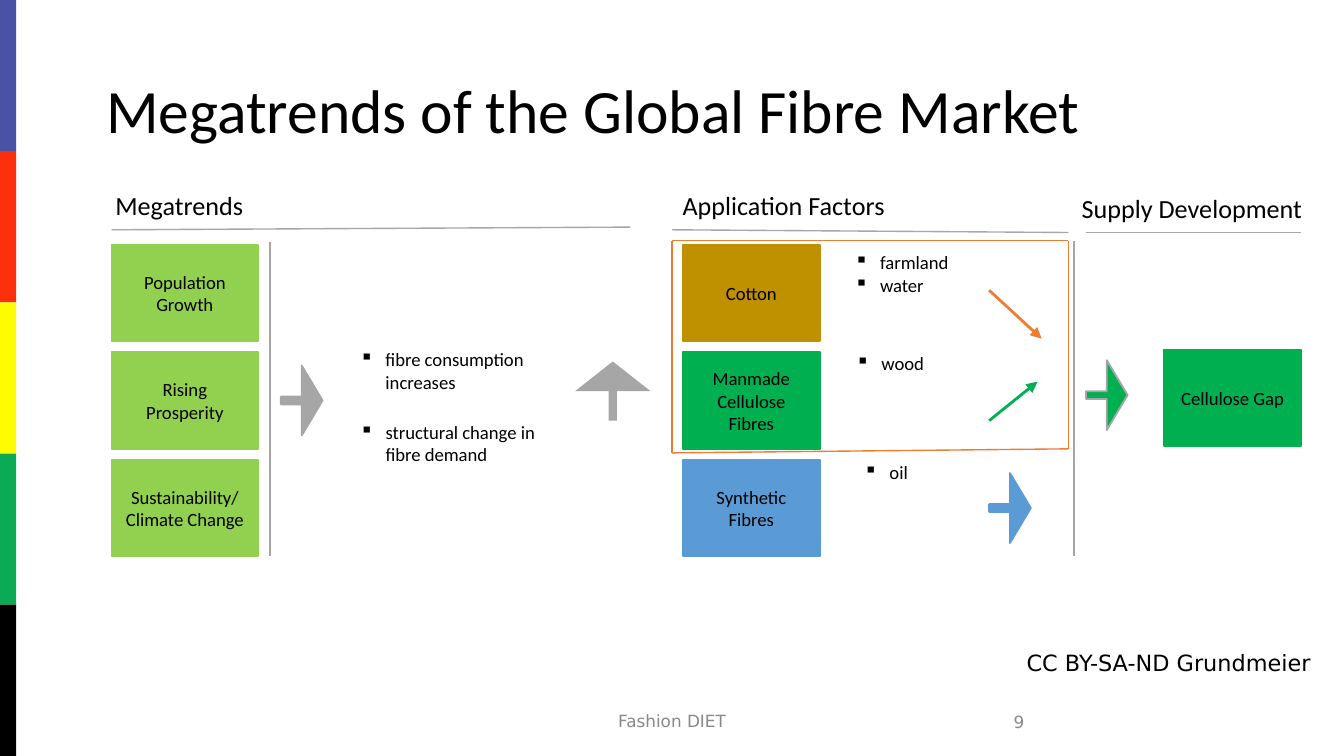
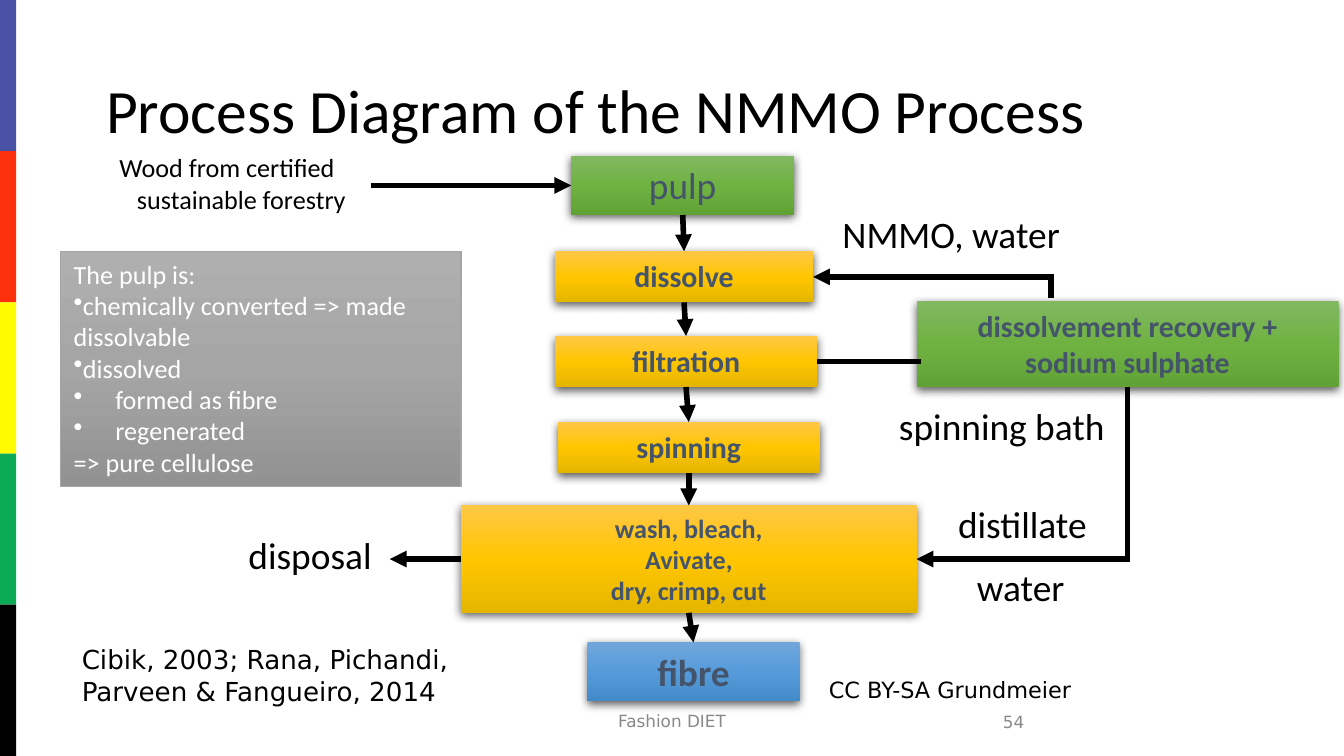
"""Build two slides on fibre market megatrends and the NMMO process."""
from copy import deepcopy
from itertools import pairwise

from lxml.etree import SubElement
from pptx import Presentation
from pptx.dml.color import RGBColor
from pptx.enum.shapes import MSO_CONNECTOR, MSO_SHAPE
from pptx.enum.text import MSO_ANCHOR, MSO_AUTO_SIZE, PP_ALIGN
from pptx.oxml.ns import qn
from pptx.util import Inches, Pt

BLACK = RGBColor(0x00, 0x00, 0x00)
WHITE = RGBColor(0xFF, 0xFF, 0xFF)
FOOTER_GREY = RGBColor(0x89, 0x89, 0x89)
RULE_GREY = RGBColor(0xA6, 0xA6, 0xA6)
DIVIDER_GREY = RGBColor(0xA5, 0xA5, 0xA5)
SLATE = RGBColor(0x44, 0x54, 0x6A)
LIME = RGBColor(0x92, 0xD0, 0x50)
OCHRE = RGBColor(0xBF, 0x90, 0x00)
GREEN = RGBColor(0x00, 0xB0, 0x50)
BLUE = RGBColor(0x5B, 0x9B, 0xD5)
ORANGE = RGBColor(0xED, 0x7D, 0x31)
BANDS = [RGBColor(0x49, 0x52, 0xA4), RGBColor(0xFC, 0x30, 0x0D),
         RGBColor(0xFF, 0xFB, 0x00), RGBColor(0x0B, 0xAA, 0x54), BLACK]
GREEN_FADE = [RGBColor(0x81, 0xB8, 0x61), RGBColor(0x6F, 0xB2, 0x42), RGBColor(0x61, 0xA2, 0x35)]
GOLD_FADE = [RGBColor(0xFF, 0xC7, 0x46), RGBColor(0xFF, 0xC6, 0x00), RGBColor(0xE5, 0xB6, 0x00)]
BLUE_FADE = [RGBColor(0x71, 0xA6, 0xDB), RGBColor(0x55, 0x9B, 0xDB), RGBColor(0x43, 0x8A, 0xC9)]
GREY_FADE = [RGBColor(0xAF, 0xAF, 0xAF), DIVIDER_GREY, RGBColor(0x92, 0x92, 0x92)]

BODY_FONT, FOOTER_FONT = "Calibri", "DejaVu Sans"
WIDTH, HEIGHT = 10, 10 * 9 / 16
BAND_WIDTH = 0.12
FOOTER = "Fashion DIET"

ROW_TOP, ROW_PITCH, ROW_HEIGHT = 1.82, 0.8, 0.72
TREND_COLUMN, FACTOR_COLUMN = (0.83, 1.09), (5.08, 1.02)
TRENDS = ["Population Growth", "Rising Prosperity", "Sustainability/ Climate Change"]
FACTORS = [("Cotton", OCHRE), ("Manmade Cellulose Fibres", GREEN), ("Synthetic Fibres", BLUE)]
HEADINGS = [("Megatrends", 0.76, 1.36, 1.33), ("Application Factors", 4.98, 1.36, 1.71),
            ("Supply Development", 7.95, 1.38, 1.9)]
BULLETS = [
    (["fibre consumption increases"], (2.58, 2.54, 1.47, 0.44)),
    (["structural change in fibre demand"], (2.58, 3.08, 1.55, 0.44)),
    (["farmland", "water"], (6.26, 1.82, 0.91, 0.44)),
    (["wood"], (6.27, 2.57, 0.71, 0.27)),
    (["oil"], (6.33, 3.38, 0.53, 0.27)),
]
BLOCK_ARROWS = [
    (MSO_SHAPE.RIGHT_ARROW, (2.09, 2.72, 0.31, 0.52), RULE_GREY, RULE_GREY),
    (MSO_SHAPE.UP_ARROW, (4.28, 2.69, 0.56, 0.44), RULE_GREY, None),
    (MSO_SHAPE.RIGHT_ARROW, (7.36, 3.52, 0.31, 0.52), BLUE, BLUE),
    (MSO_SHAPE.RIGHT_ARROW, (8.08, 2.68, 0.31, 0.52), GREEN, RULE_GREY),
]
RULES = [
    ((0.83, 1.71), (4.69, 1.69), RULE_GREY),
    ((5, 1.71), (7.95, 1.73), RULE_GREY),
    ((8.08, 1.73), (9.68, 1.73), RULE_GREY),
    ((2.01, 1.8), (2.01, 4.14), DIVIDER_GREY),
    ((7.99, 1.79), (7.99, 4.14), DIVIDER_GREY),
]
FRAME = [(5, 1.79), (7.95, 1.79), (7.95, 3.34), (5, 3.37)]
TENDENCIES = [((7.36, 2.16), (7.75, 2.52), ORANGE), ((7.36, 3.13), (7.72, 2.84), GREEN)]

STEPS = {
    "pulp": (["pulp"], (4.25, 1.16, 1.66, 0.44), GREEN_FADE, 20, False),
    "dissolve": (["dissolve"], (4.13, 1.87, 1.92, 0.38), GOLD_FADE, 16, True),
    "filtration": (["filtration"], (4.13, 2.5, 1.95, 0.38), GOLD_FADE, 16, True),
    "spinning": (["spinning"], (4.15, 3.14, 1.95, 0.38), GOLD_FADE, 16, True),
    "wash": (["wash, bleach,", "Avivate,", "dry, crimp, cut"],
             (3.43, 3.76, 3.39, 0.8), GOLD_FADE, 14, True),
    "fibre": (["fibre"], (4.37, 4.78, 1.58, 0.44), BLUE_FADE, 20, True),
    "recovery": (["dissolvement recovery + sodium sulphate"],
                 (6.82, 2.24, 3.14, 0.64), GREEN_FADE, 16, True),
}
MAIN_FLOW = ["pulp", "dissolve", "filtration", "spinning", "wash", "fibre"]
TOP, LEFT, BOTTOM, RIGHT = range(4)
SIDE_FLOWS = [
    (("wash", LEFT), (2.9, 4.16), True),
    ((2.76, 1.38), ("pulp", LEFT), True),
    (("recovery", BOTTOM), (8.39, 4.18), False),
    ((8.39, 4.16), ("wash", RIGHT), True),
    (("filtration", RIGHT), (6.85, 2.69), False),
    ((7.82, 2.22), (7.82, 2.04), False),
    ((7.82, 2.06), ("dissolve", RIGHT), True),
]
FLOW_LABELS = [
    ("NMMO, water", (6.17, 1.52, 2.1, 0.43)),
    ("spinning bath", (6.59, 2.95, 1.79, 0.44)),
    ("distillate", (7.03, 3.68, 1.28, 0.43)),
    ("water", (7.17, 4.15, 1.1, 0.43)),
    ("disposal", (1.75, 3.91, 1.15, 0.43)),
]
PULP_NOTE = [
    ("The pulp is:", None),
    ("chemically converted => made dissolvable", (0, -0.1, "•")),
    ("dissolved", (0, -0.1, "•")),
    ("formed as fibre", (0.31, -0.31, "•")),
    ("regenerated", (0.31, -0.31, "•")),
    ("=> pure cellulose", None),
]


def write(shape, lines, size, color=BLACK, font=BODY_FONT, bold=False,
          align=PP_ALIGN.LEFT, anchor=MSO_ANCHOR.TOP, indents=()):
    frame = shape.text_frame
    frame.text = "\n".join(lines)
    frame.word_wrap = True
    frame.auto_size = MSO_AUTO_SIZE.NONE
    frame.vertical_anchor = anchor
    for paragraph, indent in zip(frame.paragraphs, indents):
        if indent:
            margin, first, bullet = indent
            properties = paragraph._p.get_or_add_pPr()
            properties.set("marL", str(Inches(margin)))
            properties.set("indent", str(Inches(first)))
            if bullet:
                SubElement(properties, qn("a:buChar")).set("char", bullet)
    for paragraph in frame.paragraphs:
        paragraph.alignment = align
        for run in paragraph.runs:
            run.font.size = Pt(size)
            run.font.name = font
            run.font.bold = bold
            run.font.color.rgb = color


def add_text(slide, lines, place, size, **style):
    box = slide.shapes.add_textbox(*map(Inches, place))
    write(box, lines, size, **style)


def add_block(slide, place, fill=None, outline=None, weight=1, preset=MSO_SHAPE.RECTANGLE):
    block = slide.shapes.add_shape(preset, *map(Inches, place))
    block.shadow.inherit = False
    if fill:
        block.fill.solid()
        block.fill.fore_color.rgb = fill
    if outline:
        block.line.color.rgb = outline
        block.line.width = Pt(weight)
    else:
        block.line.fill.background()
    return block


def fade(block, colors):
    block.fill.gradient()
    block.fill.gradient_angle = 270
    stops = block.element.spPr.find(".//" + qn("a:gsLst"))
    stops.insert(1, deepcopy(stops[0]))
    for stop, position, color in zip(block.fill.gradient_stops, (0, 0.5, 1), colors):
        stop.position = position
        stop.color.rgb = color


def cast_shadow(block):
    effects = block.element.spPr.find(qn("a:effectLst"))
    shadow = SubElement(effects, qn("a:outerShdw"), blurRad=str(Pt(5)), dist=str(Pt(1.5)),
                        dir="5400000", algn="ctr", rotWithShape="0")
    tint = SubElement(shadow, qn("a:srgbClr"), val=str(BLACK))
    SubElement(tint, qn("a:alpha"), val="63000")


def add_line(slide, start, end, color, weight=0.75, arrow=False):
    line = slide.shapes.add_connector(MSO_CONNECTOR.STRAIGHT, *map(Inches, (*start, *end)))
    line.line.color.rgb = color
    line.line.width = Pt(weight)
    if arrow:
        SubElement(line.line._get_or_add_ln(), qn("a:tailEnd"), type="triangle")
    SubElement(line.element.spPr, qn("a:effectLst"))
    return line


def add_flow(slide, blocks, start, end, arrow=True):
    joined = [isinstance(point[0], str) for point in (start, end)]
    points = [(0, 0) if join else point for join, point in zip(joined, (start, end))]
    flow = add_line(slide, *points, BLACK, 3, arrow)
    if joined[0]:
        flow.begin_connect(blocks[start[0]], start[1])
    if joined[1]:
        flow.end_connect(blocks[end[0]], end[1])


def add_base_slide(deck, title, number):
    slide = deck.slides.add_slide(deck.slide_layouts[5])
    band_height = HEIGHT / len(BANDS)
    for index, color in enumerate(BANDS):
        add_block(slide, (0, index * band_height, BAND_WIDTH, band_height), color)
    heading = slide.shapes.title
    heading.left, heading.top, heading.width, heading.height = map(Inches, (0.69, 0.3, 8.62, 1.09))
    write(heading, [title], 33, anchor=MSO_ANCHOR.MIDDLE)
    heading.text_frame.paragraphs[0].line_spacing = 0.9
    for text, place, align in ((FOOTER, (3.31, 5.21, 3.38, 0.3), PP_ALIGN.CENTER),
                               (number, (5.47, 5.22, 2.25, 0.3), PP_ALIGN.RIGHT)):
        add_text(slide, [text], place, 9, color=FOOTER_GREY, font=FOOTER_FONT,
                 align=align, anchor=MSO_ANCHOR.MIDDLE)
    return slide


def build_megatrends(deck):
    slide = add_base_slide(deck, "Megatrends of the Global Fibre Market", "9")
    cells = [("Cellulose Gap", GREEN, (8.66, 2.6, 1.02, ROW_HEIGHT))]
    columns = ((TREND_COLUMN, [(trend, LIME) for trend in TRENDS]), (FACTOR_COLUMN, FACTORS))
    for (left, width), entries in columns:
        for row, (text, color) in enumerate(entries):
            cells.append((text, color, (left, ROW_TOP + row * ROW_PITCH, width, ROW_HEIGHT)))
    for text, color, place in cells:
        write(add_block(slide, place, color, color), [text], 10,
              align=PP_ALIGN.CENTER, anchor=MSO_ANCHOR.MIDDLE)
    for text, left, top, width in HEADINGS:
        add_text(slide, [text], (left, top, width, 0.34), 14)
    for lines, place in BULLETS:
        add_text(slide, lines, place, 10, indents=[(0.19, -0.19, "▪")] * len(lines))
    for preset, place, color, outline in BLOCK_ARROWS:
        arrow = add_block(slide, place, color, outline, preset=preset)
        arrow.adjustments[0] = 0.11
        arrow.adjustments[1] = 0.5
    for start, end, color in RULES:
        add_line(slide, start, end, color)
    for start, end in pairwise(FRAME + FRAME[:1]):
        add_line(slide, start, end, ORANGE)
    for start, end, color in TENDENCIES:
        add_line(slide, start, end, color, 1.5, True)
    add_text(slide, ["CC BY-SA-ND Grundmeier"], (7.54, 4.78, 2.52, 0.3), 12, font=FOOTER_FONT)


def build_process(deck):
    slide = add_base_slide(deck, "Process Diagram of the NMMO Process", "54")
    note = add_block(slide, (0.45, 1.87, 2.98, 1.75), outline=DIVIDER_GREY, weight=0.75)
    fade(note, GREY_FADE)
    lines, indents = zip(*PULP_NOTE)
    write(note, lines, 14, WHITE, indents=indents)
    blocks = {}
    for step, (lines, place, colors, size, bold) in STEPS.items():
        blocks[step] = add_block(slide, place)
        fade(blocks[step], colors)
        cast_shadow(blocks[step])
        write(blocks[step], lines, size, SLATE, bold=bold, align=PP_ALIGN.CENTER)
    for upper, lower in pairwise(MAIN_FLOW):
        add_flow(slide, blocks, (upper, BOTTOM), (lower, TOP))
    for start, end, arrow in SIDE_FLOWS:
        add_flow(slide, blocks, start, end, arrow)
    for text, place in FLOW_LABELS:
        add_text(slide, [text], place, 20)
    add_text(slide, ["Wood from certified", "sustainable forestry"], (0.79, 1.08, 2.32, 0.57), 14,
             indents=[None, (0.13, 0, None)])
    add_text(slide, ["CC BY-SA Grundmeier"], (5.72, 4.98, 2.7, 0.3), 12,
             font=FOOTER_FONT, align=PP_ALIGN.CENTER)
    add_text(slide, ["Cibik, 2003; Rana, Pichandi, Parveen & Fangueiro, 2014"],
             (0.51, 4.74, 3.61, 0.57), 14, font=FOOTER_FONT)


def main():
    deck = Presentation()
    deck.slide_width, deck.slide_height = Inches(WIDTH), Inches(HEIGHT)
    build_megatrends(deck)
    build_process(deck)
    deck.save("out.pptx")


if __name__ == "__main__":
    main()
